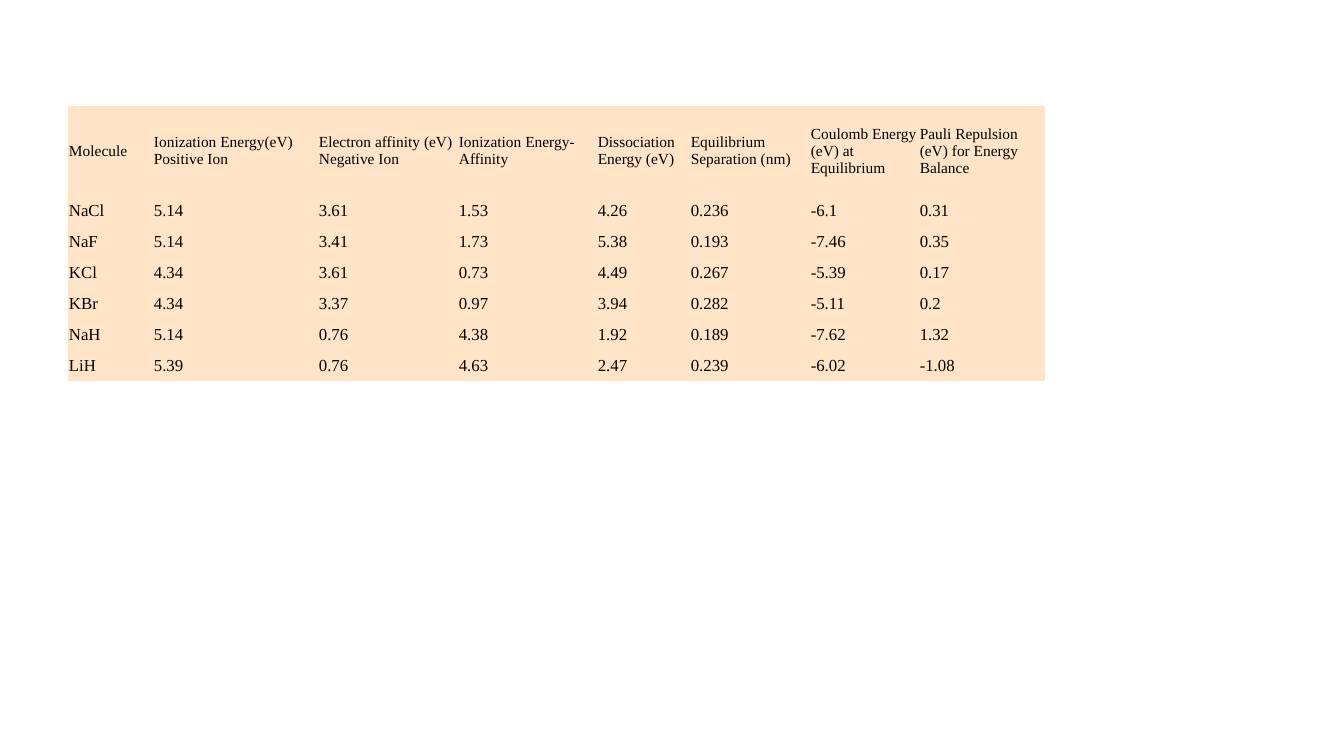
import pptx
import pptx.dml.color
import pptx.enum.text
import pptx.util

EMU_PER_PX = 914400 / 100.8
BLANK_LAYOUT = 6
NO_STYLE_NO_GRID = "{2D5ABB26-0587-4C30-8999-92F81FD0307C}"

COLUMN_WIDTHS = [85, 165, 140, 139, 93, 120, 109, 126]
HEADER_HEIGHT, BODY_HEIGHT = 89, 31
HEADINGS = [
    "Molecule",
    "Ionization Energy(eV) Positive Ion",
    "Electron affinity (eV) Negative Ion",
    "Ionization Energy-Affinity",
    "Dissociation Energy (eV)",
    "Equilibrium Separation (nm)",
    "Coulomb Energy (eV) at Equilibrium",
    "Pauli Repulsion (eV) for Energy Balance",
]
MOLECULES = [
    ["NaCl", 5.14, 3.61, 1.53, 4.26, 0.236, -6.1, 0.31],
    ["NaF", 5.14, 3.41, 1.73, 5.38, 0.193, -7.46, 0.35],
    ["KCl", 4.34, 3.61, 0.73, 4.49, 0.267, -5.39, 0.17],
    ["KBr", 4.34, 3.37, 0.97, 3.94, 0.282, -5.11, 0.2],
    ["NaH", 5.14, 0.76, 4.38, 1.92, 0.189, -7.62, 1.32],
    ["LiH", 5.39, 0.76, 4.63, 2.47, 0.239, -6.02, -1.08],
]


def px(length):
    return pptx.util.Emu(round(length * EMU_PER_PX))


def color(hex_string):
    return pptx.dml.color.RGBColor.from_string(hex_string)


def set_attributes(target, values):
    for name, value in values.items():
        setattr(target, name, value)


class SlideBuilder:
    """Holds the style and the slide being filled."""

    font_name = "Times New Roman"
    text_color = "000000"
    cell_color = "FFE4C8"
    header_size, body_size = 11, 12
    cell_format = {
        "margin_left": px(1),
        "margin_right": px(1),
        "margin_top": px(1),
        "margin_bottom": 0,
        "vertical_anchor": pptx.enum.text.MSO_ANCHOR.MIDDLE,
    }

    def __init__(self, slide):
        self.slide = slide

    def add_table(self, left, top, column_widths, row_heights, rows):
        shape = self.slide.shapes.add_table(
            len(rows), len(column_widths), px(left), px(top),
            px(sum(column_widths)), px(sum(row_heights)))
        table = shape.table
        set_attributes(table, {"first_row": False, "horz_banding": False})
        table._tbl.tblPr.find(pptx.oxml.ns.qn("a:tableStyleId")).text = NO_STYLE_NO_GRID
        for column, width in zip(table.columns, column_widths):
            column.width = px(width)
        for row, height in zip(table.rows, row_heights):
            row.height = px(height)
        for row_index, values in enumerate(rows):
            size = self.body_size if row_index else self.header_size
            for column_index, value in enumerate(values):
                self.fill_cell(table.cell(row_index, column_index), str(value), size)

    def fill_cell(self, cell, text, size):
        set_attributes(cell, self.cell_format)
        cell.fill.solid()
        cell.fill.fore_color.rgb = color(self.cell_color)
        run = cell.text_frame.paragraphs[0].add_run()
        run.text = text
        set_attributes(run.font, {"name": self.font_name, "size": pptx.util.Pt(size)})
        run.font.color.rgb = color(self.text_color)


def main():
    presentation = pptx.Presentation()
    set_attributes(presentation, {"slide_width": px(1344), "slide_height": px(756)})
    slide = presentation.slides.add_slide(presentation.slide_layouts[BLANK_LAYOUT])
    row_heights = [HEADER_HEIGHT] + [BODY_HEIGHT] * len(MOLECULES)
    SlideBuilder(slide).add_table(68, 106, COLUMN_WIDTHS, row_heights, [HEADINGS] + MOLECULES)
    presentation.save("out.pptx")


if __name__ == "__main__":
    main()
